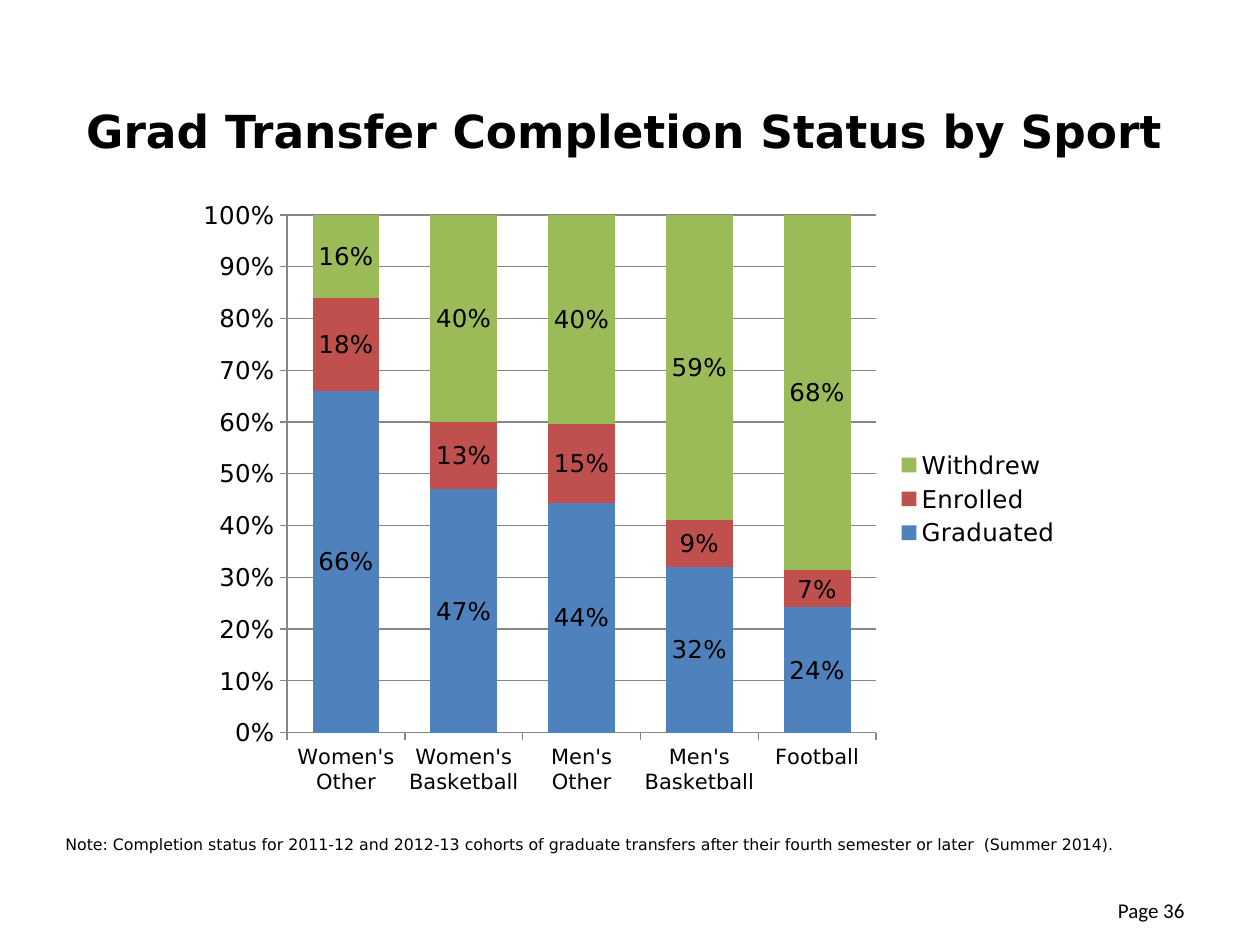
import pptx
import pptx.util
import pptx.dml.color
import pptx.chart.data
import pptx.enum.chart
import pptx.enum.text
import pptx.oxml
import pptx.oxml.ns

PX = 914400 / 126
FONT = "DejaVu Sans"
ALIGN = pptx.enum.text.PP_ALIGN
ANCHOR = pptx.enum.text.MSO_ANCHOR

TITLE = "Grad Transfer Completion Status by Sport"
NOTE = ("Note: Completion status for 2011-12 and 2012-13 cohorts of graduate transfers "
        "after their fourth semester or later  (Summer 2014).")
PAGE = "Page 36"
SPORTS = ["Women's Other", "Women's Basketball", "Men's Other", "Men's Basketball", "Football"]
STATUSES = [
    ("Graduated", "4F81BD", [0.66, 0.47, 0.44, 0.32, 0.24]),
    ("Enrolled", "C0504D", [0.18, 0.13, 0.15, 0.09, 0.07]),
    ("Withdrew", "9BBB59", [0.16, 0.40, 0.40, 0.59, 0.68]),
]
CHART_BOX = (186, 189, 887, 620)
PLOT_BOX = (287, 215, 589, 518)


def px(*lengths):
    return [round(length * PX) for length in lengths]


def color(hex_code):
    return pptx.dml.color.RGBColor.from_string(hex_code)


def set_all(target, values):
    for name, value in values.items():
        setattr(target, name, value)


def style_font(font, size, name=FONT, bold=False):
    set_all(font, {"size": pptx.util.Pt(size), "name": name, "bold": bold})
    font.color.rgb = color("000000")


def write(shape, text, size, align, anchor, name=FONT, bold=False):
    frame = shape.text_frame
    set_all(frame, {"word_wrap": True, "vertical_anchor": anchor,
                    "auto_size": pptx.enum.text.MSO_AUTO_SIZE.NONE})
    paragraph = frame.paragraphs[0]
    paragraph.alignment = align
    run = paragraph.add_run()
    run.text = text
    style_font(run.font, size, name, bold)


def place_plot(chart):
    left, top, width, height = CHART_BOX
    x, y, w, h = PLOT_BOX
    shares = {"x": (x - left) / width, "y": (y - top) / height, "w": w / width, "h": h / height}
    modes = '<c:layoutTarget val="inner"/><c:xMode val="edge"/><c:yMode val="edge"/>'
    sizes = "".join(f'<c:{key} val="{share:.3f}"/>' for key, share in shares.items())
    layout = pptx.oxml.parse_xml(
        f'<c:layout {pptx.oxml.ns.nsdecls("c")}><c:manualLayout>{modes}{sizes}'
        '</c:manualLayout></c:layout>')
    plot_area = chart.plots[0]._element.getparent()
    for automatic in plot_area.findall(pptx.oxml.ns.qn("c:layout")):
        plot_area.remove(automatic)
    plot_area.insert(0, layout)


def add_status_chart(slide):
    enums = pptx.enum.chart
    data = pptx.chart.data.CategoryChartData(number_format="0%")
    data.categories = SPORTS
    for status, _, shares in STATUSES:
        data.add_series(status, shares)
    chart = slide.shapes.add_chart(
        enums.XL_CHART_TYPE.COLUMN_STACKED_100, *px(*CHART_BOX), data).chart
    style_font(chart.font, 10, "Calibri")
    set_all(chart, {"has_title": False, "has_legend": True})
    set_all(chart.legend, {"position": enums.XL_LEGEND_POSITION.RIGHT, "include_in_layout": False})
    style_font(chart.legend.font, 14)

    columns = chart.plots[0]
    set_all(columns, {"gap_width": 76, "overlap": 100, "vary_by_categories": False})
    for series, (_, fill, _) in zip(columns.series, STATUSES):
        series.format.fill.solid()
        series.format.fill.fore_color.rgb = color(fill)
        labels = series.data_labels
        set_all(labels, {"show_value": True, "number_format": "0%",
                         "number_format_is_linked": False,
                         "position": enums.XL_LABEL_POSITION.CENTER})
        style_font(labels.font, 14)

    shares_axis = chart.value_axis
    set_all(shares_axis, {"has_major_gridlines": True, "minimum_scale": 0,
                          "maximum_scale": 1, "major_unit": 0.1})
    set_all(shares_axis.tick_labels, {"number_format": "0%", "number_format_is_linked": False})
    for axis, size in ((chart.category_axis, 12), (shares_axis, 14)):
        axis.major_tick_mark = enums.XL_TICK_MARK.OUTSIDE
        style_font(axis.tick_labels.font, size)
    for ruled in (chart.category_axis, shares_axis, shares_axis.major_gridlines):
        ruled.format.line.color.rgb = color("878787")
        ruled.format.line.width = pptx.util.Pt(0.75)
    place_plot(chart)


def main():
    deck = pptx.Presentation()
    deck.slide_width, deck.slide_height = px(1260, 945)
    slide = deck.slides.add_slide(deck.slide_layouts[5])

    title = slide.shapes.title
    set_all(title, dict(zip(("left", "top", "width", "height"), px(42, 91, 1197, 78))))
    title.text_frame.margin_right = px(44)[0]
    write(title, TITLE, 26, ALIGN.CENTER, ANCHOR.MIDDLE, bold=True)

    page = slide.shapes.add_textbox(*px(903, 885, 294, 50))
    write(page, PAGE, 12, ALIGN.RIGHT, ANCHOR.MIDDLE, "Calibri")
    note = slide.shapes.add_textbox(*px(53, 829, 1166, 32))
    write(note, NOTE, 9, ALIGN.LEFT, ANCHOR.TOP)
    add_status_chart(slide)
    deck.save("out.pptx")


if __name__ == "__main__":
    main()
